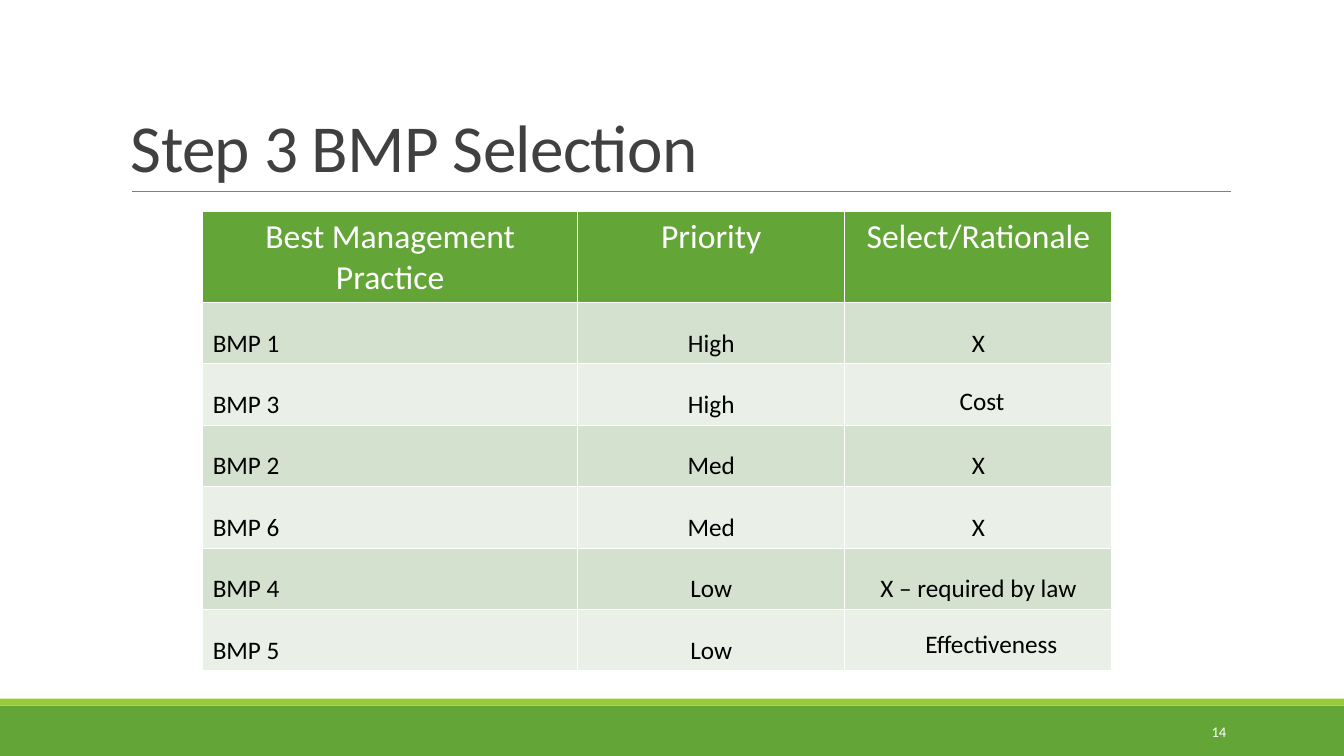
from lxml.etree import SubElement
from pptx import Presentation
from pptx.dml.color import RGBColor
from pptx.enum.shapes import MSO_CONNECTOR, MSO_SHAPE
from pptx.enum.text import MSO_ANCHOR, PP_ALIGN
from pptx.oxml.ns import qn
from pptx.util import Inches, Pt

COLORS = {
    "green": "63A537",
    "lime": "99CB38",
    "rule": "808080",
    "title": "404040",
    "white": "FFFFFF",
    "black": "000000",
    "dark band": "D3E1CE",
    "light band": "EAF0E8",
}
HEADERS = ["Best Management Practice", "Priority", "Select/Rationale"]
PRACTICES = [
    ["BMP 1", "High", "X"],
    ["BMP 3", "High", ""],
    ["BMP 2", "Med", "X"],
    ["BMP 6", "Med", "X"],
    ["BMP 4", "Low", "X – required by law"],
    ["BMP 5", "Low", ""],
]


class SlideBuilder:
    """Places styled elements; all lengths are percentages of the slide's size."""

    font = "Calibri"

    def __init__(self, presentation):
        self.width = presentation.slide_width
        self.height = presentation.slide_height
        self.slide = presentation.slides.add_slide(presentation.slide_layouts[6])
        self.shapes = self.slide.shapes

    def across(self, share):
        return round(self.width * share / 100)

    def down(self, share):
        return round(self.height * share / 100)

    def box(self, left, top, width, height):
        return self.across(left), self.down(top), self.across(width), self.down(height)

    def color(self, name):
        return RGBColor.from_string(COLORS[name])

    def format_text(self, text_frame, size, color, align=PP_ALIGN.LEFT):
        for paragraph in text_frame.paragraphs:
            paragraph.alignment = align
            for run in paragraph.runs:
                run.font.name = self.font
                run.font.size = Pt(size)
                run.font.color.rgb = self.color(color)

    def band(self, top, height, color):
        shape = self.shapes.add_shape(MSO_SHAPE.RECTANGLE, *self.box(0, top, 100, height))
        shape.shadow.inherit = False
        shape.fill.solid()
        shape.fill.fore_color.rgb = self.color(color)
        shape.line.fill.background()

    def rule(self, left, right, top):
        y = self.down(top)
        line = self.shapes.add_connector(
            MSO_CONNECTOR.STRAIGHT, self.across(left), y, self.across(right), y)
        line.line.color.rgb = self.color("rule")
        line.line.width = Pt(0.5)
        SubElement(line._element.spPr, qn("a:effectLst"))

    def text(self, words, box, size, color, align=PP_ALIGN.LEFT, anchor=MSO_ANCHOR.TOP):
        text_frame = self.shapes.add_textbox(*self.box(*box)).text_frame
        text_frame.word_wrap = True
        text_frame.vertical_anchor = anchor
        text_frame.text = words
        self.format_text(text_frame, size, color, align)
        return text_frame.paragraphs[0]

    def title(self, words, box):
        paragraph = self.text(words, box, 48, "title", anchor=MSO_ANCHOR.BOTTOM)
        paragraph.line_spacing = 0.85
        for run in paragraph.runs:
            run.font._element.set("spc", "-50")

    def cell_borders(self, cell):
        properties = cell._tc.get_or_add_tcPr()
        for side in ("lnL", "lnR", "lnT", "lnB"):
            border = SubElement(properties, qn(f"a:{side}"), w=str(Pt(1)))
            fill = SubElement(border, qn("a:solidFill"))
            SubElement(fill, qn("a:srgbClr"), val=COLORS["white"])

    def cell(self, cell, words, fill, size, color, align, anchor):
        self.cell_borders(cell)
        cell.fill.solid()
        cell.fill.fore_color.rgb = self.color(fill)
        cell.vertical_anchor = anchor
        cell.text = words
        self.format_text(cell.text_frame, size, color, align)

    def table(self, left, top, column_widths, header_height, row_height, headers, rows):
        heights = [header_height] + [row_height] * len(rows)
        box = self.box(left, top, sum(column_widths), sum(heights))
        table = self.shapes.add_table(len(heights), len(column_widths), *box).table
        for column, width in zip(table.columns, column_widths):
            column.width = self.across(width)
        for row, height in zip(table.rows, heights):
            row.height = self.down(height)
        for column, words in enumerate(headers):
            self.cell(table.cell(0, column), words, "green", 24, "white",
                      PP_ALIGN.CENTER, MSO_ANCHOR.TOP)
        for row, values in enumerate(rows, start=1):
            fill = "dark band" if row % 2 else "light band"
            for column, words in enumerate(values):
                align = PP_ALIGN.CENTER if column else PP_ALIGN.LEFT
                self.cell(table.cell(row, column), words, fill, 18, "black",
                          align, MSO_ANCHOR.BOTTOM)


def main():
    presentation = Presentation()
    presentation.slide_width = Inches(13.33)
    presentation.slide_height = Inches(7.5)
    builder = SlideBuilder(presentation)

    builder.band(93.33, 6.67, "green")
    builder.band(92.4, 0.93, "lime")
    builder.rule(9.83, 91.6, 25.33)
    builder.title("Step 3 BMP Selection", (9, 4.13, 82.5, 21.2))
    builder.table(15.08, 28, [27.9, 19.88, 19.88], 11.33, 8.13, HEADERS, PRACTICES)
    builder.text("Cost", (70.67, 50.27, 6.9, 5.6), 18, "black")
    builder.text("Effectiveness", (68.12, 82.4, 11.85, 5.33), 18, "black")
    builder.text("14", (81.25, 94.13, 10.73, 5.33), 10.5, "white",
                 PP_ALIGN.RIGHT, MSO_ANCHOR.MIDDLE)

    presentation.save("out.pptx")


if __name__ == "__main__":
    main()
